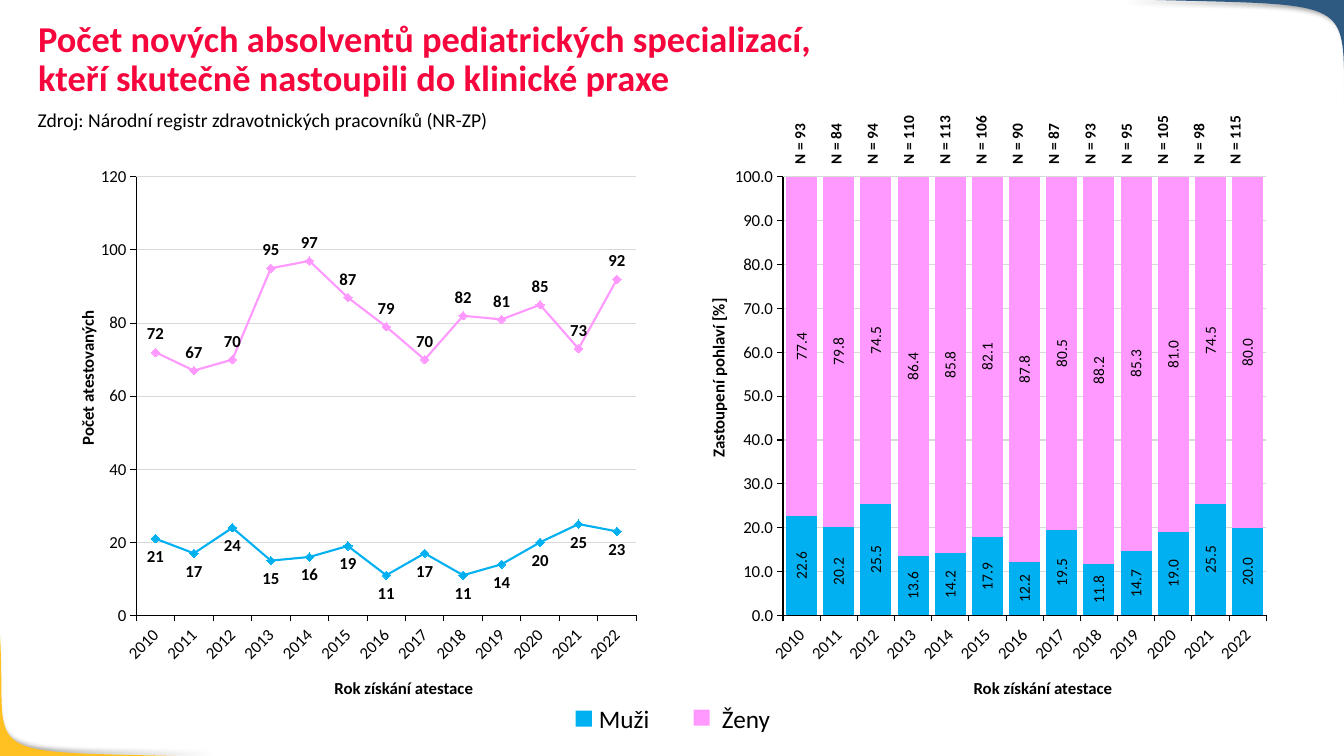
from lxml import etree
from pptx import Presentation
from pptx import util as u
from pptx.chart.data import CategoryChartData
from pptx.dml.color import RGBColor
from pptx.enum import chart as ch, shapes, text
from pptx.oxml import parse_xml
from pptx.oxml.ns import nsdecls, qn

WIDE, HIGH = u.Inches(13.33), u.Inches(7.5)
FONT = "Calibri"
BLACK = RGBColor(0, 0, 0)
RED = RGBColor(0xF6, 0x06, 0x3C)
BLUE = RGBColor(0x00, 0xB0, 0xF0)
PINK = RGBColor(0xFF, 0x99, 0xFF)
GRID = RGBColor(0xD9, 0xD9, 0xD9)
GOLD = RGBColor(0xFF, 0xC1, 0x21)
NAVY = RGBColor(0x2E, 0x59, 0x80)

YEARS = [str(year) for year in range(2010, 2023)]
MEN = [21, 17, 24, 15, 16, 19, 11, 17, 11, 14, 20, 25, 23]
WOMEN = [72, 67, 70, 95, 97, 87, 79, 70, 82, 81, 85, 73, 92]
TOTALS = [m + w for m, w in zip(MEN, WOMEN)]


def across(part):
    """Percent of the slide's width as a length."""
    return u.Emu(round(WIDE * part / 100))


def down(part):
    """Percent of the slide's height as a length."""
    return u.Emu(round(HIGH * part / 100))


def frame(x, y, w, h):
    return across(x), down(y), across(w), down(h)


def style(font, size, color=BLACK, bold=False):
    font.name, font.size, font.bold = FONT, u.Pt(size), bold
    font.color.rgb = color


def add_run(para, words, size, color=BLACK, bold=False):
    run = para.add_run()
    run.text = words
    style(run.font, size, color, bold)


def add_text(slide, area, lines, size, color=BLACK, bold=False, wrap=False,
             align=text.PP_ALIGN.CENTER, turn=0, space=1.0):
    box = slide.shapes.add_textbox(*frame(*area))
    box.rotation = turn
    body = box.text_frame
    body.word_wrap = wrap
    body.vertical_anchor = text.MSO_ANCHOR.MIDDLE
    for i, line in enumerate(lines):
        para = body.add_paragraph() if i else body.paragraphs[0]
        para.alignment, para.line_spacing = align, space
        add_run(para, line, size, color, bold)


def add_corner(slide, start, bend, end, tip, color, angle):
    """Draw a corner bounded by one cubic curve, with a soft shadow."""
    knots = [start, *bend, end]
    curve = []
    for i in range(41):
        t = i / 40
        parts = [(1 - t) ** 3, 3 * t * (1 - t) ** 2, 3 * t * t * (1 - t), t ** 3]
        x, y = (sum(p * k[axis] for p, k in zip(parts, knots)) for axis in (0, 1))
        curve.append((across(x), down(y)))
    pen = slide.shapes.build_freeform(*curve[0])
    pen.add_line_segments(curve[1:] + [(across(tip[0]), down(tip[1]))])
    shape = pen.convert_to_shape()
    shape.fill.solid()
    shape.fill.fore_color.rgb = color
    shape.line.fill.background()
    shape._element.spPr.append(parse_xml(
        f'<a:effectLst {nsdecls("a")}><a:outerShdw blurRad="{u.Pt(4)}" '
        f'dist="{u.Pt(3)}" dir="{angle * 60000}" algn="tl" rotWithShape="0">'
        '<a:srgbClr val="000000"><a:alpha val="40000"/></a:srgbClr>'
        '</a:outerShdw></a:effectLst>'))


def turn_text(part, angle):
    """Rotate the labels of a chart part."""
    body = next(part._element.iter(qn("a:bodyPr")))
    body.set("rot", str(angle * 60000))
    body.set("vert", "horz")


def set_plot(chart, x, y, w, h):
    """Fix the inner plot area, in shares of the chart."""
    area = next(chart._chartSpace.iter(qn("c:plotArea")))
    for old in area.findall(qn("c:layout")):
        area.remove(old)
    layout = etree.Element(qn("c:layout"))
    manual = etree.SubElement(layout, qn("c:manualLayout"))
    marks = [("layoutTarget", "inner"), ("xMode", "edge"), ("yMode", "edge"),
             ("x", x), ("y", y), ("w", w), ("h", h)]
    for name, value in marks:
        etree.SubElement(manual, qn(f"c:{name}")).set("val", str(value))
    area.insert(0, layout)


def add_chart(slide, kind, left, men, women, plot, top, step, form):
    data = CategoryChartData()
    data.categories = YEARS
    data.add_series("Muži", men)
    data.add_series("Ženy", women)
    chart = slide.shapes.add_chart(kind, *frame(left, 20.67, 41.34, 68.27), data).chart
    chart.has_title = chart.has_legend = False
    style(chart.font, 12)
    set_plot(chart, *plot)
    years, scale = chart.category_axis, chart.value_axis
    for axis in (years, scale):
        axis.major_tick_mark = ch.XL_TICK_MARK.OUTSIDE
        axis.format.line.color.rgb = BLACK
        axis.format.line.width = u.Pt(0.75)
        style(axis.tick_labels.font, 12)
    turn_text(years, -45)
    scale.minimum_scale, scale.maximum_scale, scale.major_unit = 0, top, step
    scale.has_major_gridlines = True
    scale.major_gridlines.format.line.color.rgb = GRID
    scale.major_gridlines.format.line.width = u.Pt(0.75)
    scale.tick_labels.number_format = form
    scale.tick_labels.number_format_is_linked = False
    chart.plots[0].vary_by_categories = False
    return chart.plots[0]


def add_tags(series, size, form, bold=False):
    tags = series.data_labels
    tags.show_value = True
    tags.number_format, tags.number_format_is_linked = form, False
    style(tags.font, size, bold=bold)
    return tags


def add_counts(slide):
    plot = add_chart(slide, ch.XL_CHART_TYPE.LINE_MARKERS, 6.83, MEN, WOMEN,
                     (0.08, 0.04, 0.9, 0.85), 120, 20, "General")
    sides = ch.XL_LABEL_POSITION.BELOW, ch.XL_LABEL_POSITION.ABOVE
    for series, color, side in zip(plot.series, (BLUE, PINK), sides):
        series.smooth = False
        series.format.line.color.rgb = color
        series.format.line.width = u.Pt(1.5)
        mark = series.marker
        mark.style, mark.size = ch.XL_MARKER_STYLE.DIAMOND, 6
        mark.format.fill.solid()
        mark.format.fill.fore_color.rgb = color
        mark.format.line.color.rgb = color
        add_tags(series, 12, "General", True).position = side


def add_shares(slide):
    men = [round(100 * m / n, 1) for m, n in zip(MEN, TOTALS)]
    women = [round(100 * w / n, 1) for w, n in zip(WOMEN, TOTALS)]
    plot = add_chart(slide, ch.XL_CHART_TYPE.COLUMN_STACKED, 53.71, men, women,
                     (0.11, 0.04, 0.87, 0.85), 100, 10, "0.0")
    plot.gap_width, plot.overlap = 20, 100
    for series, color in zip(plot.series, (BLUE, PINK)):
        series.format.fill.solid()
        series.format.fill.fore_color.rgb = color
        turn_text(add_tags(series, 11, "0.0"), -90)


def add_totals(slide):
    table = slide.shapes.add_table(1, len(TOTALS) + 1,
                                   *frame(58.74, 13.47, 37.73, 8.4)).table
    table.first_row = table.horz_banding = False
    for i, col in enumerate(table.columns):
        col.width = across(2.7 if i < len(TOTALS) else 2.48)
        cell = table.cell(0, i)
        cell.fill.background()
        cell.vertical_anchor = text.MSO_ANCHOR.MIDDLE
        cell.margin_left = cell.margin_top = cell.margin_right = u.Inches(0.01)
        cell.margin_bottom = 0
        if i < len(TOTALS):
            cell._tc.get_or_add_tcPr().set("vert", "vert270")
            add_run(cell.text_frame.paragraphs[0], f"N = {TOTALS[i]}", 11, bold=True)


def add_key(slide, x, y, color, label, start):
    """Draw one legend entry."""
    chip = slide.shapes.add_shape(shapes.MSO_SHAPE.RECTANGLE, *frame(x, y, 1.2, 2.13))
    chip.shadow.inherit = False
    chip.fill.solid()
    chip.fill.fore_color.rgb = color
    chip.line.fill.background()
    add_text(slide, (start, 92.4, 7.2, 5.33), [label], 18, wrap=True)


def main():
    deck = Presentation()
    deck.slide_width, deck.slide_height = WIDE, HIGH
    slide = deck.slides.add_slide(deck.slide_layouts[6])
    add_corner(slide, (16, 100.13), [(-2.55, 99.2), (0.6, 101.2)], (0, 84),
               (-0.08, 100.13), GOLD, 225)
    add_corner(slide, (83.35, -0.13), [(102.78, 0.93), (99.47, -1.33)],
               (100.15, 18.93), (100.15, -0.13), NAVY, 45)
    add_text(slide, (2.1, 2.27, 96.32, 11.33),
             ["Počet nových absolventů pediatrických specializací,",
              "kteří skutečně nastoupili do klinické praxe"],
             26, RED, True, True, text.PP_ALIGN.LEFT, space=0.9)
    add_shares(slide)
    add_counts(slide)
    for left in (24.08, 71.64):
        add_text(slide, (left, 88.93, 11.93, 4), ["Rok získání atestace"], 12, bold=True)
    for left, wide, name in ((0.68, 11.63, "Počet atestovaných"),
                             (46.66, 13.5, "Zastoupení pohlaví [%]")):
        add_text(slide, (left, 48, wide, 4), [name], 12, bold=True, turn=270)
    add_totals(slide)
    add_key(slide, 42.84, 94, BLUE, "Muži", 42.84)
    add_key(slide, 51.61, 93.87, PINK, "Ženy", 51.91)
    add_text(slide, (1.58, 13.6, 35.93, 4.53),
             ["Zdroj: Národní registr zdravotnických pracovníků (NR-ZP)"], 14)
    deck.save("out.pptx")


if __name__ == "__main__":
    main()
